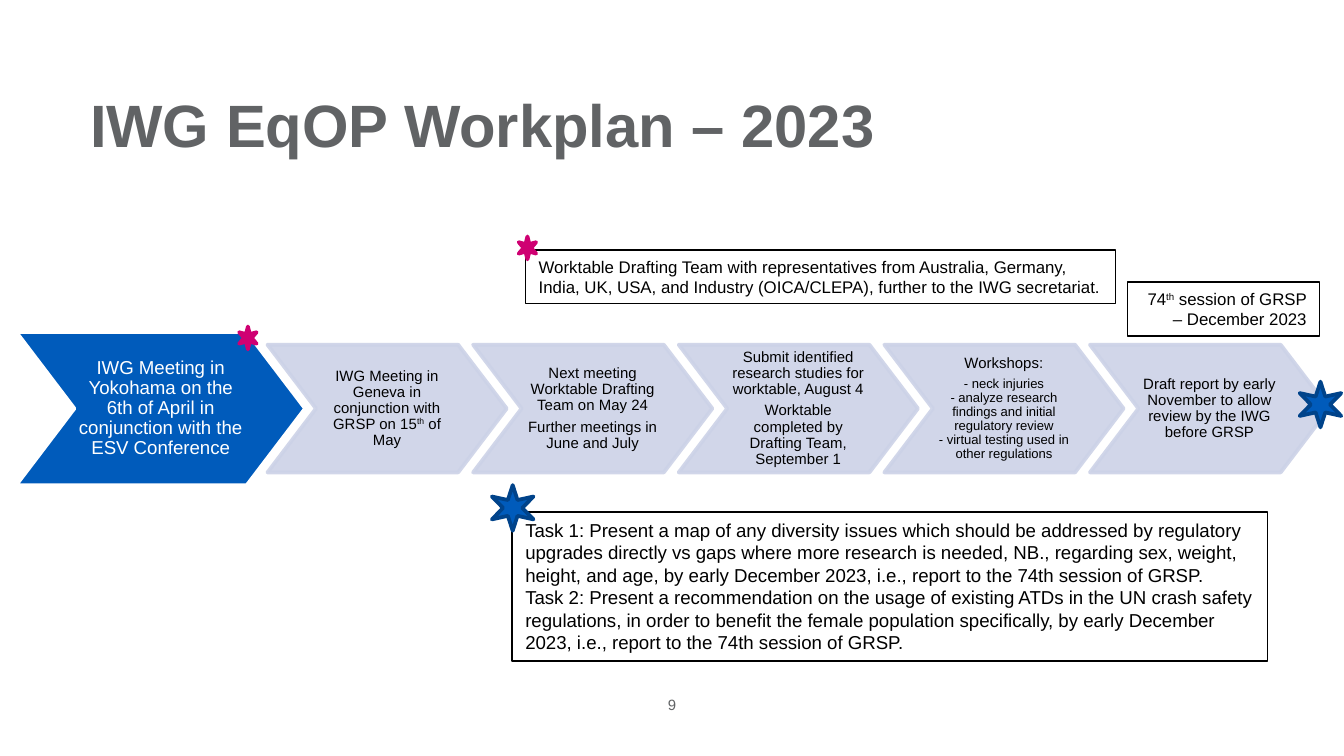
from lxml import etree
from pptx import Presentation, util as u
from pptx.dml.color import RGBColor
from pptx.enum import shapes, text
from pptx.oxml import ns

W = 10
H = W * 9 / 16
BLUE, DARK_BLUE, PALE, PINK = "005BBB", "00438A", "CCD2E7", "CF0072"
GREY, BLACK, WHITE = "616365", "000000", "FFFFFF"
ALIGN, ANCHOR = text.PP_ALIGN, text.MSO_ANCHOR
SHAPE = shapes.MSO_SHAPE

# Row of steps: first chevron is larger, the rest follow at an equal pitch
MID_Y = 3.04
STEP_X, STEP_PITCH = 1.99, 1.53
STEP_W, STEP_H = 1.78, 0.95

# "^" switches superscript on and off, "\n" breaks the line
FIRST_STEP = ("IWG Meeting in Yokohama on the 6th of April in conjunction "
              "with the ESV Conference")
STEPS = [
    [("IWG Meeting in Geneva in conjunction with GRSP on 15^th^ of May", 8)],
    [("Next meeting Worktable Drafting Team on May 24", 8),
     ("Further meetings in June and July", 8)],
    [("Submit identified research studies for worktable, August 4", 8),
     ("Worktable completed by Drafting Team, September 1", 8)],
    [("Workshops:", 8),
     ("- neck injuries\n- analyze research findings and initial regulatory "
      "review\n- virtual testing used in other regulations", 7)],
    [("Draft report by early November to allow review by the IWG before GRSP", 8)],
]
TASKS = [
    "Task 1: Present a map of any diversity issues which should be addressed by "
    "regulatory upgrades directly vs gaps where more research is needed, NB., "
    "regarding sex, weight, height, and age, by early December 2023, i.e., "
    "report to the 74th session of GRSP.",
    "Task 2: Present a recommendation on the usage of existing ATDs in the UN "
    "crash safety regulations, in order to benefit the female population "
    "specifically, by early December 2023, i.e., report to the 74th session of GRSP.",
]
TEAM = ("Worktable Drafting Team with representatives from Australia, Germany, "
        "India, UK, USA, and Industry (OICA/CLEPA), further to the IWG secretariat.")


def rgb(color):
    return RGBColor.from_string(color)


def write(p, content, size, color=BLACK, bold=False, align=ALIGN.LEFT,
          spacing=None, after=0):
    """Fill one paragraph, with its superscripts and line breaks."""
    p.alignment = align
    p.line_spacing = spacing
    p.space_after = u.Pt(after)
    for row, line in enumerate(content.split("\n")):
        if row:
            p.add_line_break()
        for i, part in enumerate(line.split("^")):
            r = p.add_run()
            r.text = part
            r.font.name, r.font.size, r.font.bold = "Arial", u.Pt(size), bold
            r.font.color.rgb = rgb(color)
            if i % 2:
                r.font._element.set("baseline", "30000")


def setup_frame(tf, anchor, insets=(0.1, 0.05)):
    tf.word_wrap = True
    tf.auto_size = text.MSO_AUTO_SIZE.NONE
    tf.vertical_anchor = anchor
    tf.margin_left = tf.margin_right = u.Inches(insets[0])
    tf.margin_top = tf.margin_bottom = u.Inches(insets[1])


def write_all(tf, items, **fmt):
    for i, (content, size) in enumerate(items):
        p = tf.add_paragraph() if i else tf.paragraphs[0]
        write(p, content, size, **fmt)


def add_shape(s, kind, box, fill=None, line=BLACK, width=2.0):
    sp = s.shapes.add_shape(kind, *map(u.Inches, box))
    sp.shadow.inherit = False
    if fill:
        sp.fill.solid()
        sp.fill.fore_color.rgb = rgb(fill)
    else:
        sp.fill.background()
    sp.line.color.rgb = rgb(line)
    sp.line.width = u.Pt(width)
    return sp


def add_chevron(s, x, w, h, items, fill, line, color, opacity=None):
    sp = add_shape(s, SHAPE.CHEVRON, (x, MID_Y - h / 2, w, h), fill, line)
    sp.adjustments[0] = 0.38
    if opacity:
        for clr in sp._element.spPr.iter(ns.qn("a:srgbClr")):
            etree.SubElement(clr, ns.qn("a:alpha")).set("val", str(opacity * 1000))
    setup_frame(sp.text_frame, ANCHOR.MIDDLE, (0.01, 0.01))
    write_all(sp.text_frame, items, color=color, align=ALIGN.CENTER,
              spacing=0.9, after=items[0][1] * 0.35)


def add_note(s, box, items, align=ALIGN.LEFT):
    sp = add_shape(s, SHAPE.RECTANGLE, box, width=0.75)
    setup_frame(sp.text_frame, ANCHOR.TOP)
    write_all(sp.text_frame, items, align=align)


def add_star(s, x, y, w, h, adj, fill, line):
    sp = add_shape(s, SHAPE.STAR_6_POINT, (x, y, w, h), fill, line)
    sp.adjustments[0] = adj


def add_title(s, content):
    sp = s.shapes.title
    sp.left, sp.top, sp.width, sp.height = map(u.Inches, (0.57, 0.6, 8.87, 0.61))
    setup_frame(sp.text_frame, ANCHOR.TOP)
    write(sp.text_frame.paragraphs[0], content, 32, color=GREY, bold=True)


def add_page_number(s, number):
    w = W / 7
    sp = s.shapes.add_textbox(*map(u.Inches, ((W - w) / 2, 5.17, w, 0.14)))
    setup_frame(sp.text_frame, ANCHOR.MIDDLE, (0, 0))
    write(sp.text_frame.paragraphs[0], number, 8, color=GREY, align=ALIGN.CENTER)


def main():
    prs = Presentation()
    prs.slide_width, prs.slide_height = u.Inches(W), u.Inches(H)
    s = prs.slides.add_slide(prs.slide_layouts[5])
    add_page_number(s, "9")
    add_title(s, "IWG EqOP Workplan – 2023")

    # Timeline
    add_chevron(s, 0.12, 2.15, 1.14, [(FIRST_STEP, 10)], BLUE, WHITE, WHITE)
    for i, items in enumerate(STEPS):
        add_chevron(s, STEP_X + i * STEP_PITCH, STEP_W, STEP_H, items,
                    PALE, PALE, BLACK, opacity=90)

    # Notes and the stars that tie them to their steps
    add_note(s, (3.81, 3.81, 5.62, 1.11), [(task, 10) for task in TASKS])
    add_star(s, 3.66, 3.61, 0.31, 0.34, 0.2, BLUE, DARK_BLUE)
    add_star(s, 1.78, 2.43, 0.13, 0.17, 0.19, PINK, PINK)
    add_note(s, (3.91, 1.86, 4.39, 0.4), [(TEAM, 9)])
    add_star(s, 9.67, 2.84, 0.31, 0.34, 0.2, BLUE, DARK_BLUE)
    add_note(s, (8.39, 2.1, 1.43, 0.4),
             [("74^th^ session of GRSP – December 2023", 9)], ALIGN.RIGHT)
    add_star(s, 3.86, 1.76, 0.13, 0.17, 0.19, PINK, PINK)

    prs.save("out.pptx")


if __name__ == "__main__":
    main()
